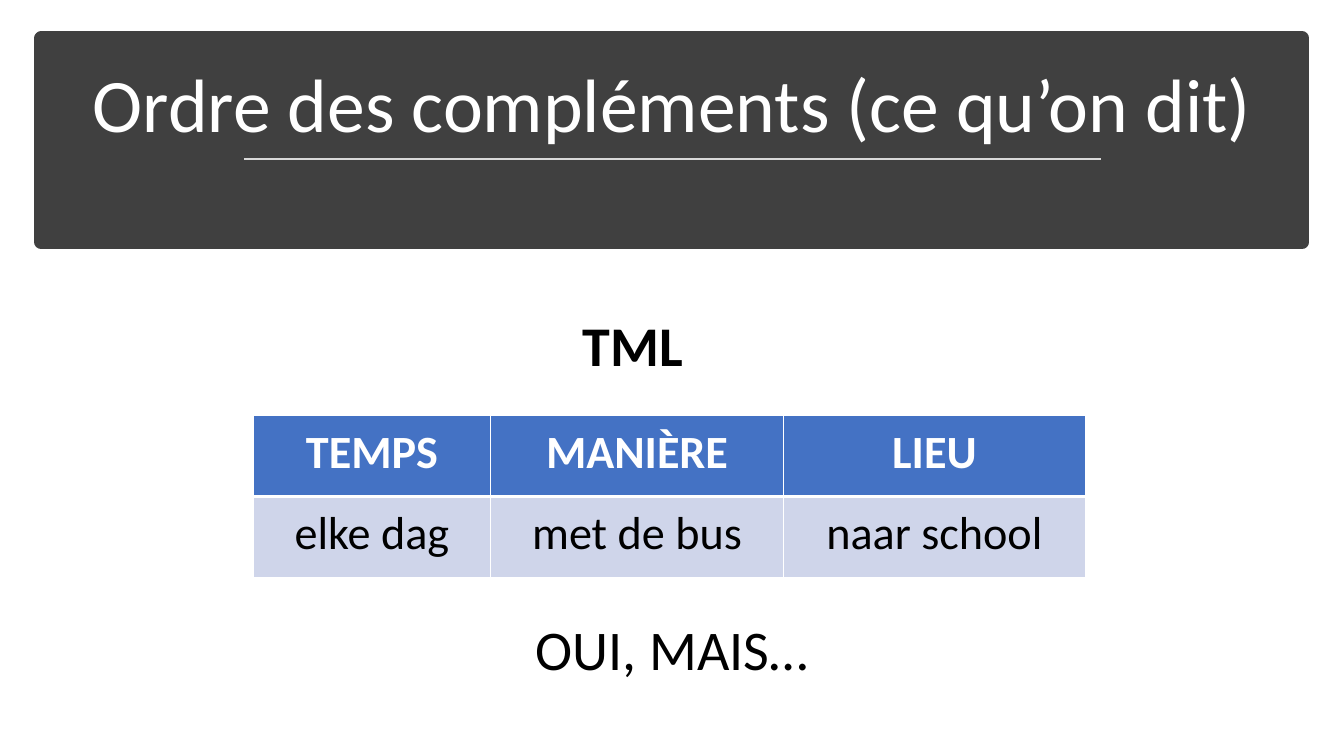
"""Build the slide on the order of complements in Dutch: time, manner, place."""
from lxml.etree import SubElement
from pptx import Presentation
from pptx.dml.color import RGBColor
from pptx.enum.shapes import MSO_CONNECTOR, MSO_SHAPE
from pptx.enum.text import MSO_ANCHOR, MSO_AUTO_SIZE, PP_ALIGN
from pptx.oxml import parse_xml
from pptx.oxml.ns import nsdecls, qn
from pptx.util import Cm, Pt

THEME = {
    "font": "Calibri",
    "banner": "404040", "rule": "D9D9D9", "light": "FFFFFF", "dark": "000000",
    "header": "4472C4", "row": "CFD5EA",
    "title_size": 54, "note_size": 40, "table_size": 33,
}


def write(frame, words, size, color, bold=False, align=PP_ALIGN.CENTER):
    """Put one formatted paragraph into a text frame."""
    paragraph = frame.paragraphs[0]
    paragraph.alignment = align
    run = paragraph.add_run()
    run.text = words
    style = {"name": THEME["font"], "size": Pt(THEME[size]), "bold": bold}
    for key, value in style.items():
        setattr(run.font, key, value)
    run.font.color.rgb = RGBColor.from_string(THEME[color])


def set_border(cell, position, side, points):
    """Draw one side of a cell as a solid light line."""
    border = parse_xml(
        f'<a:{side} {nsdecls("a")} w="{Pt(points)}"><a:solidFill>'
        f'<a:srgbClr val="{THEME["light"]}"/></a:solidFill></a:{side}>')
    cell._tc.get_or_add_tcPr().insert(position, border)


deck = Presentation()
deck.slide_width, deck.slide_height = Cm(33.87), Cm(19.05)
slide = deck.slides.add_slide(deck.slide_layouts[5])

title = slide.shapes.title
placement = {"left": Cm(1.47), "top": Cm(1.3), "width": Cm(30.94), "height": Cm(2.59)}
for key, value in placement.items():
    setattr(title, key, value)
title_format = {"vertical_anchor": MSO_ANCHOR.BOTTOM, "word_wrap": True,
                "auto_size": MSO_AUTO_SIZE.NONE}
for key, value in title_format.items():
    setattr(title.text_frame, key, value)
write(title.text_frame, "Ordre des compléments (ce qu’on dit)", "title_size", "light")
title.text_frame.paragraphs[0].line_spacing = 0.9

banner = slide.shapes.add_shape(
    MSO_SHAPE.RECTANGLE, Cm(1.04), Cm(0.97), Cm(31.78), Cm(5.13))
banner.shadow.inherit = False
banner.fill.solid()
for paint in (banner.fill.fore_color, banner.line.color):
    paint.rgb = RGBColor.from_string(THEME["banner"])
banner.line.width = Pt(10)
title._element.addprevious(banner._element)

underline = slide.shapes.add_connector(
    MSO_CONNECTOR.STRAIGHT, Cm(6.15), Cm(4.01), Cm(27.74), Cm(4.01))
underline.line.color.rgb = RGBColor.from_string(THEME["rule"])
underline.line.width = Pt(1.75)
SubElement(underline._element.spPr, qn("a:effectLst"))

complements = [("TEMPS", "MANIÈRE", "LIEU"),
               ("elke dag", "met de bus", "naar school")]
row_styles = [("header", "light", True), ("row", "dark", False)]
borders = [{"lnL": 1, "lnR": 1, "lnT": 1, "lnB": 3},
           {"lnL": 1, "lnR": 1, "lnT": 3, "lnB": 1}]
cell_format = {"margin_left": Cm(0.46), "margin_right": Cm(0.46),
               "margin_top": Cm(0.23), "margin_bottom": Cm(0.23)}
order = slide.shapes.add_table(
    2, 3, Cm(6.38), Cm(10.46), Cm(20.98), Cm(4.1)).table
order.horz_banding = False
for column, width in zip(order.columns, (5.99, 7.37, 7.62)):
    column.width = Cm(width)
for r, (words, (fill, color, bold)) in enumerate(zip(complements, row_styles)):
    for c, word in enumerate(words):
        cell = order.cell(r, c)
        for key, value in cell_format.items():
            setattr(cell, key, value)
        cell.fill.solid()
        cell.fill.fore_color.rgb = RGBColor.from_string(THEME[fill])
        write(cell.text_frame, word, "table_size", color, bold)
        for position, (side, points) in enumerate(borders[r].items()):
            set_border(cell, position, side, points)

notes = [("OUI, MAIS…", 9.8, 15.37, 14.27, False, PP_ALIGN.CENTER),
         ("TML", 14.43, 7.7, 7.82, True, PP_ALIGN.LEFT)]
for words, left, top, width, bold, align in notes:
    note = slide.shapes.add_textbox(Cm(left), Cm(top), Cm(width), Cm(1.96))
    note.text_frame.word_wrap = True
    note.text_frame.auto_size = MSO_AUTO_SIZE.SHAPE_TO_FIT_TEXT
    write(note.text_frame, words, "note_size", "dark", bold, align)

deck.save("out.pptx")
